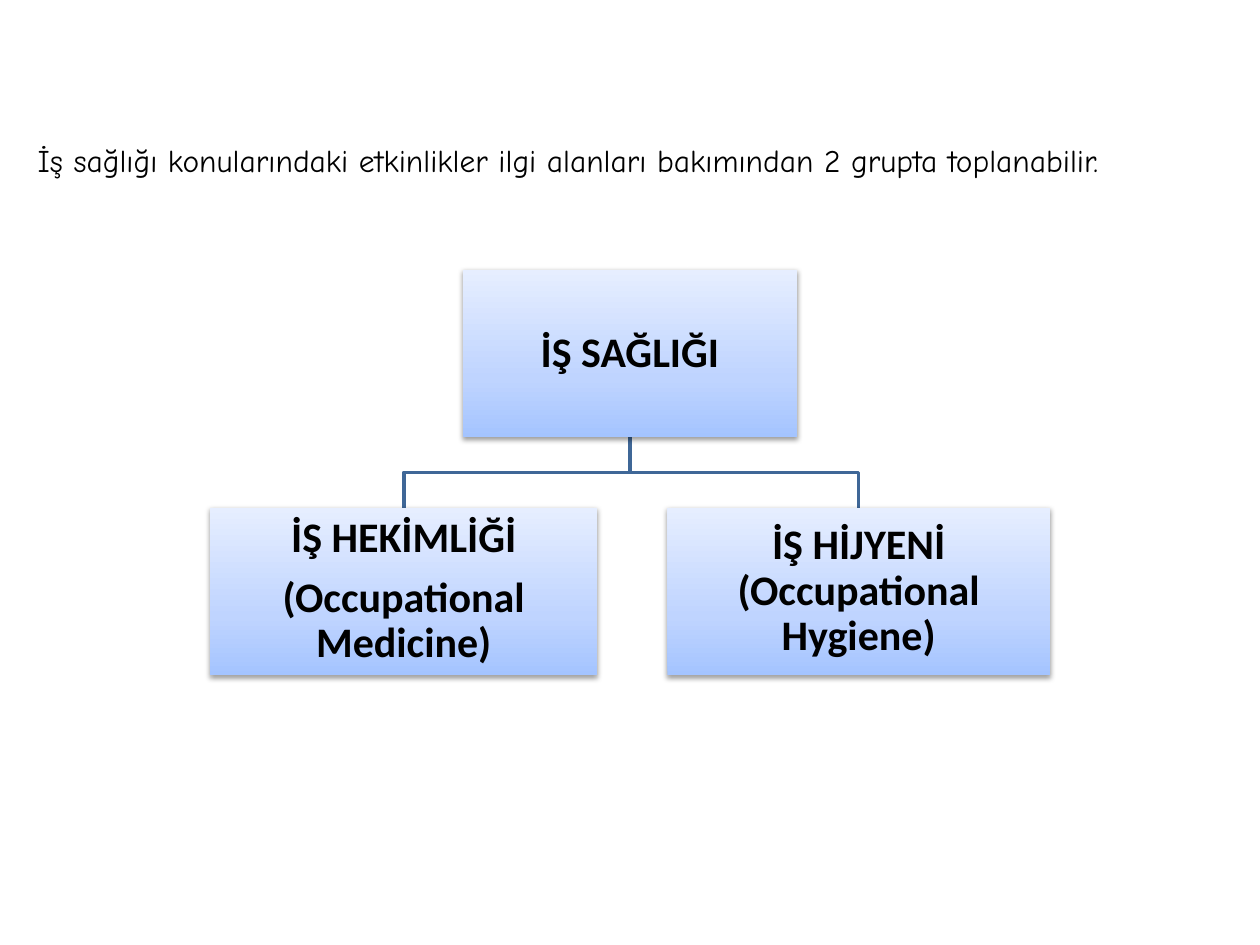
from copy import deepcopy

from lxml.etree import SubElement
from pptx import Presentation
from pptx.dml.color import RGBColor
from pptx.enum.shapes import MSO_SHAPE as Shape
from pptx.enum.text import MSO_ANCHOR as Anchor, PP_ALIGN as Align
from pptx.oxml.ns import qn
from pptx.util import Pt

COLORS = {
    "text": "000000",
    "line": "3F6797",
    "shadow": "000000",
    "bottom": "A4C4FF",
    "middle": "BFD4FF",
    "top": "E6EEFF",
}
GRADIENT = [(0, "bottom"), (0.35, "middle"), (1, "top")]


def write(frame, text, font, size, bold=False, align=Align.LEFT, spacing=1, after=0):
    frame.word_wrap = True
    for index, line in enumerate(text.split("\n")):
        para = frame.add_paragraph() if index else frame.paragraphs[0]
        para.alignment = align
        para.line_spacing = spacing
        para.space_after = Pt(after)
        span = para.add_run()
        span.text = line
        span.font.name = font
        span.font.size = Pt(size)
        span.font.bold = bold
        span.font.color.rgb = RGBColor.from_string(COLORS["text"])


deck = Presentation()
deck.slide_width, deck.slide_height = Pt(720), Pt(540)
page = deck.slides.add_slide(deck.slide_layouts[6])

intro = page.shapes.add_textbox(Pt(14.4), Pt(77), Pt(680.4), Pt(51))
write(
    intro.text_frame,
    "İş sağlığı konularındaki etkinlikler ilgi alanları bakımından 2 grupta toplanabilir.",
    font="Comic Neue",
    size=18,
)

BOX_HEIGHT = 95.8
ROOT_TOP, BRANCH_TOP = 154.1, 290.1
root_bottom = ROOT_TOP + BOX_HEIGHT
middle = (root_bottom + BRANCH_TOP) / 2
center = 360

boxes = [
    (264.5, ROOT_TOP, 191, "İŞ SAĞLIĞI"),
    (120, BRANCH_TOP, 221.4, "İŞ HEKİMLİĞİ\n(Occupational Medicine)"),
    (381.4, BRANCH_TOP, 218.6, "İŞ HİJYENİ (Occupational Hygiene)"),
]

for left, top, width, label in reversed(boxes[1:]):
    end = left + width / 2
    outline = page.shapes.build_freeform(Pt(center), Pt(root_bottom))
    corners = [(center, middle), (end, middle), (end, BRANCH_TOP)]
    outline.add_line_segments([(Pt(x), Pt(y)) for x, y in corners], close=False)
    branch = outline.convert_to_shape()
    branch.shadow.inherit = False
    branch.fill.background()
    branch.line.color.rgb = RGBColor.from_string(COLORS["line"])
    branch.line.width = Pt(2)

for left, top, width, label in boxes:
    box = page.shapes.add_shape(Shape.RECTANGLE, Pt(left), Pt(top), Pt(width), Pt(BOX_HEIGHT))
    box.line.fill.background()

    box.fill.gradient()
    box.fill.gradient_angle = 90
    properties = box._element.spPr
    stops = properties.find(".//" + qn("a:gsLst"))
    stops.append(deepcopy(stops[0]))
    for stop, (position, color) in zip(box.fill.gradient_stops, GRADIENT):
        stop.position = position
        stop.color.rgb = RGBColor.from_string(COLORS[color])

    box.shadow.inherit = False
    shadow = SubElement(
        properties.find(qn("a:effectLst")),
        qn("a:outerShdw"),
        blurRad=str(Pt(3.1)),
        dist=str(Pt(1.6)),
        dir="5400000",
        rotWithShape="0",
    )
    shade = SubElement(shadow, qn("a:srgbClr"), val=COLORS["shadow"])
    SubElement(shade, qn("a:alpha"), val="38000")

    frame = box.text_frame
    frame.vertical_anchor = Anchor.MIDDLE
    frame.margin_left = frame.margin_right = Pt(1.2)
    frame.margin_top = frame.margin_bottom = Pt(1.2)
    write(frame, label, font="Calibri", size=24, bold=True, align=Align.CENTER, spacing=0.9, after=8.4)

deck.save("out.pptx")
